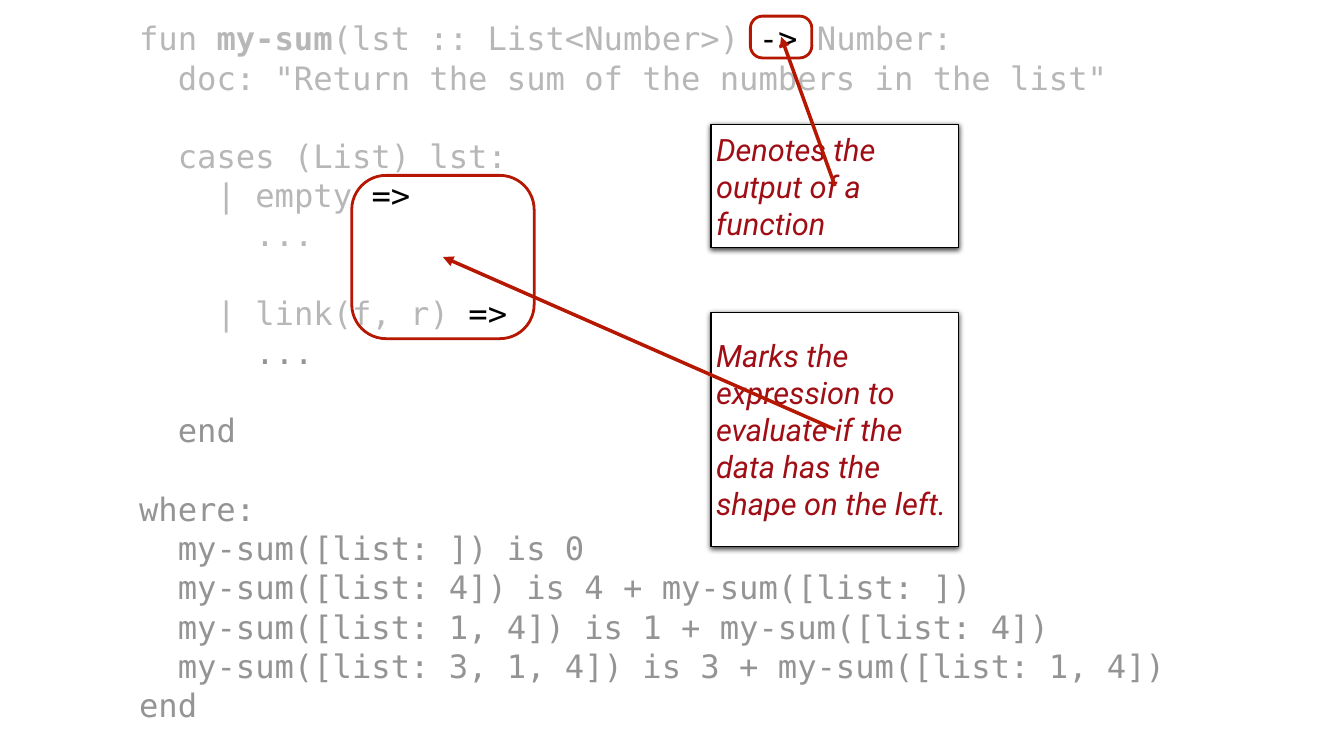
import pptx
import pptx.dml.color
import pptx.enum.shapes
import pptx.enum.text
import pptx.oxml
import pptx.oxml.ns
import pptx.util
from lxml import etree

RGBColor = pptx.dml.color.RGBColor
Pt = pptx.util.Pt
SHAPE = pptx.enum.shapes.MSO_SHAPE
ANCHOR = pptx.enum.text.MSO_ANCHOR
qn = pptx.oxml.ns.qn

PX = 9144  # 100 px to the inch
FADED = RGBColor(0xB7, 0xB7, 0xB7)
GREY = RGBColor(0x94, 0x94, 0x94)
BLACK = RGBColor(0, 0, 0)
WHITE = RGBColor(0xFF, 0xFF, 0xFF)
RED = RGBColor(0xB5, 0x17, 0x00)
NOTE_RED = RGBColor(0xA0, 0x0E, 0x15)

CODE_FONT, CODE_SIZE, CODE_LEADING = "DejaVu Sans Mono", 46, 56
INDENT = 77  # two characters of code

# Each line: indent level, blank lines above, spans of (text, colour, bold).
CODE = [
    (0, 0, [("fun ", FADED, False), ("my-sum", FADED, True),
            ("(lst :: List<Number>)", FADED, False),
            (" -> ", BLACK, False), ("Number:", FADED, False)]),
    (1, 0, [('doc: "Return the sum of the numbers in the list"', FADED, False)]),
    (1, 1, [("cases (List) lst:", FADED, False)]),
    (2, 0, [("| empty ", FADED, False), ("=>", BLACK, False)]),
    (3, 0, [("...", FADED, False)]),
    (2, 1, [("| link(f, r)", FADED, False), (" =>", BLACK, False)]),
    (3, 0, [("...", GREY, False)]),
    (1, 1, [("end", GREY, False)]),
    (0, 1, [("where:", GREY, False)]),
    (1, 0, [("my-sum([list: ]) is 0", GREY, False)]),
    (1, 0, [("my-sum([list: 4]) is 4 + my-sum([list: ])", GREY, False)]),
    (1, 0, [("my-sum([list: 1, 4]) is 1 + my-sum([list: 4])", GREY, False)]),
    (1, 0, [("my-sum([list: 3, 1, 4]) is 3 + my-sum([list: 1, 4])", GREY, False)]),
    (0, 0, [("end", GREY, False)]),
]


def px(*lengths):
    return [length * PX for length in lengths]


def add_span(para, text, *, font, size, color, bold=False, italic=False):
    span = para.add_run()
    span.text = text
    span.font.name = font
    span.font.size = Pt(size)
    span.font.color.rgb = color
    span.font.bold = bold
    span.font.italic = italic


def set_frame(frame, inset, anchor):
    frame.word_wrap = True
    frame.vertical_anchor = anchor
    frame.margin_left = frame.margin_right = inset * PX
    frame.margin_top = frame.margin_bottom = inset * PX


def add_code(page, lines, place):
    frame = page.shapes.add_textbox(*px(*place)).text_frame
    set_frame(frame, 8, ANCHOR.TOP)
    for number, (level, blanks, spans) in enumerate(lines):
        para = frame.add_paragraph() if number else frame.paragraphs[0]
        para.line_spacing = Pt(CODE_LEADING)
        para.space_before = Pt(CODE_LEADING * blanks)
        properties = para._p.get_or_add_pPr()
        properties.set("marL", str(level * INDENT * PX))
        properties.set("indent", "0")
        for text, color, bold in spans:
            add_span(para, text, font=CODE_FONT, size=CODE_SIZE,
                     color=color, bold=bold)


def add_ring(page, place, corner):
    """Outline a piece of code with a rounded rectangle."""
    ring = page.shapes.add_shape(SHAPE.ROUNDED_RECTANGLE, *px(*place))
    ring.adjustments[0] = corner
    ring.fill.background()
    ring.line.color.rgb = RED
    ring.line.width = Pt(4)
    ring.shadow.inherit = False


def add_soft_shadow(box):
    box.shadow.inherit = False
    effects = box._element.spPr.find(qn("a:effectLst"))
    shadow = etree.SubElement(effects, qn("a:outerShdw"), blurRad=str(Pt(8)),
                              dist=str(Pt(2)), dir="5400000", rotWithShape="0")
    color = etree.SubElement(shadow, qn("a:srgbClr"), val=str(BLACK))
    etree.SubElement(color, qn("a:alpha"), val="75000")


def add_note(page, text, place):
    box = page.shapes.add_shape(SHAPE.RECTANGLE, *px(*place))
    box.fill.solid()
    box.fill.fore_color.rgb = WHITE
    box.line.color.rgb = BLACK
    box.line.width = Pt(2)
    add_soft_shadow(box)
    set_frame(box.text_frame, 10, ANCHOR.MIDDLE)
    para = box.text_frame.paragraphs[0]
    para.alignment = pptx.enum.text.PP_ALIGN.LEFT
    add_span(para, text, font="Roboto", size=44, color=NOTE_RED, italic=True)


def add_arrow(page, start, end):
    arrow = page.shapes.add_connector(
        pptx.enum.shapes.MSO_CONNECTOR.STRAIGHT, *px(*start, *end))
    arrow.line.color.rgb = RED
    arrow.line.width = Pt(5)
    etree.SubElement(arrow.line._get_or_add_ln(), qn("a:tailEnd"), type="triangle")
    etree.SubElement(arrow._element.spPr, qn("a:effectLst"))


def main():
    deck = pptx.Presentation()
    deck.slide_width, deck.slide_height = px(2667, 1500)
    page = deck.slides.add_slide(deck.slide_layouts[6])

    add_code(page, CODE, (268, 28, 2130, 1445))
    add_ring(page, (698, 348, 362, 324), 0.21)
    add_note(page, "Denotes the output of a function", (1411, 247, 491, 244))
    add_ring(page, (1489, 32, 122, 83), 0.29)
    add_note(page, "Marks the expression to evaluate if the data has the "
             "shape on the left.", (1411, 620, 491, 464))
    add_arrow(page, (1657, 852), (879, 510))
    add_arrow(page, (1657, 369), (1550, 73))

    deck.save("out.pptx")


if __name__ == "__main__":
    main()
